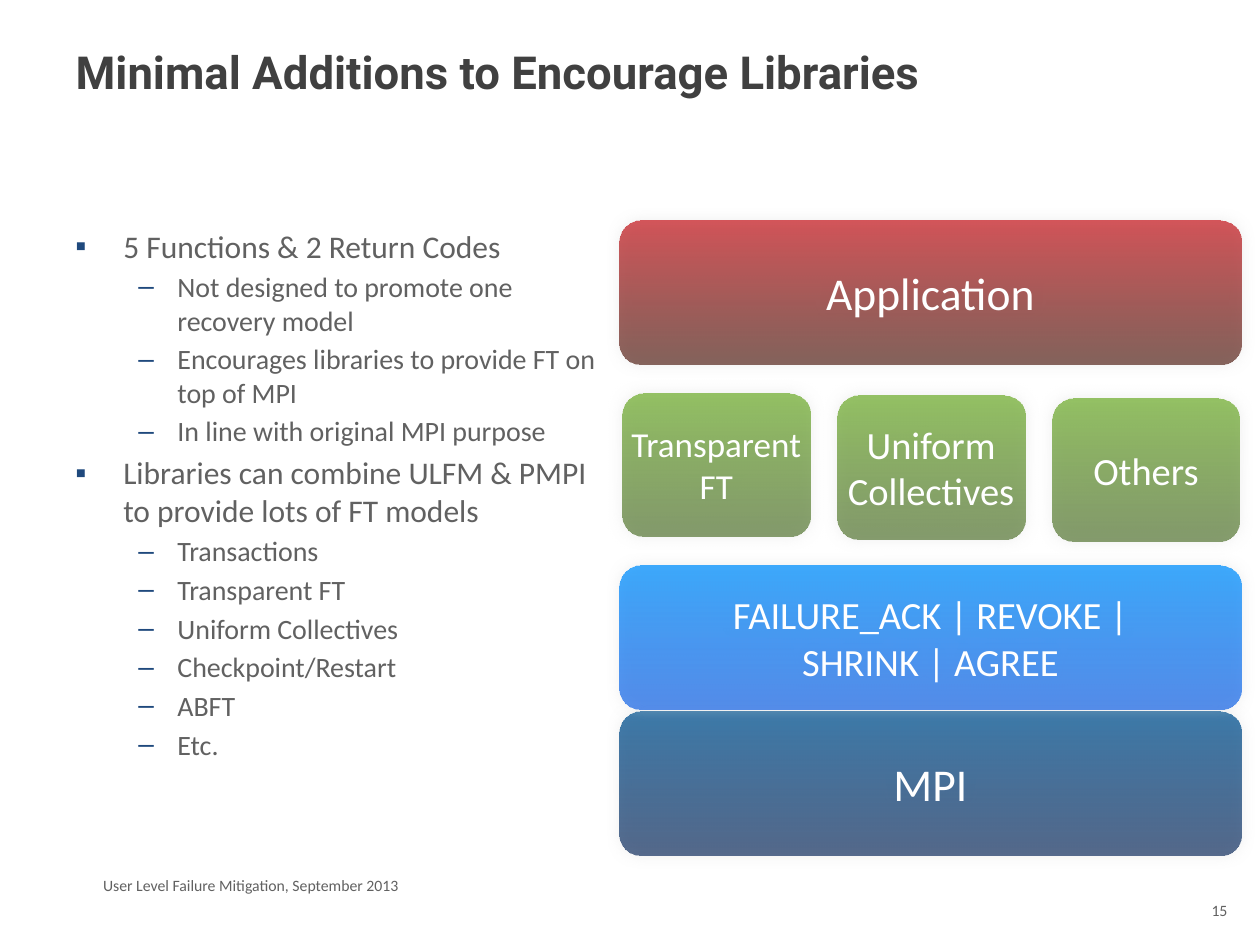
import pptx
import pptx.util
import pptx.dml.color
import pptx.enum.shapes
import pptx.enum.text
import pptx.oxml
import pptx.oxml.ns
import lxml.etree

COLUMNS, ROWS = 100, 75
BODY_FONT, TITLE_FONT = "Calibri", "Roboto"
GREY, DARK, NAVY, WHITE = "616161", "404040", "1F497D", "FFFFFF"
RED = ("C82026", "49160B")
GREEN = ("74B034", "496C25")
SKY = ("0090FF", "0057E5")
BLUE = ("005291", "002054")
ALIGN = pptx.enum.text.PP_ALIGN
ANCHOR = pptx.enum.text.MSO_ANCHOR


def colour(value):
    return pptx.dml.color.RGBColor.from_string(value)


def add_element(parent, tag, **attributes):
    name = pptx.oxml.ns.qn(tag)
    return lxml.etree.SubElement(parent, name, attributes)


class SlideBuilder:
    def __init__(self, deck):
        self.deck = deck
        self.page = deck.slides.add_slide(deck.slide_layouts[5])

    def place(self, left, top, width, height):
        """Turn grid columns and rows into slide lengths."""
        across = self.deck.slide_width / COLUMNS
        down = self.deck.slide_height / ROWS
        return (round(left * across), round(top * down),
                round(width * across), round(height * down))

    def style(self, para, size, value, font=BODY_FONT, bold=False):
        for span in para.runs:
            span.font.name = font
            span.font.size = pptx.util.Pt(size)
            span.font.bold = bold
            span.font.color.rgb = colour(value)

    def title(self, text, *area):
        box = self.page.shapes.title
        box.left, box.top, box.width, box.height = self.place(*area)
        frame = box.text_frame
        frame.text = text
        frame.vertical_anchor = ANCHOR.TOP
        frame.auto_size = pptx.enum.text.MSO_AUTO_SIZE.NONE
        frame.paragraphs[0].alignment = ALIGN.LEFT
        self.style(frame.paragraphs[0], 26, DARK, TITLE_FONT, True)

    def text_box(self, text, *area):
        frame = self.page.shapes.add_textbox(*self.place(*area)).text_frame
        frame.word_wrap = True
        frame.text = text
        return frame

    def note(self, text, align, *area):
        para = self.text_box(text, *area).paragraphs[0]
        para.alignment = align
        self.style(para, 9, GREY)

    def bullets(self, items, *area):
        frame = self.text_box("\n".join(text for level, text in items), *area)
        looks = [(18, 0.38, -0.38, "▪"), (16, 0.81, -0.31, "–")]
        for index, (level, text) in enumerate(items):
            size, margin, indent, mark = looks[level]
            para = frame.paragraphs[index]
            para.level = level
            if index:
                para.space_before = pptx.util.Pt(round(size * 0.18, 1))
            properties = para._p.get_or_add_pPr()
            properties.set("marL", str(pptx.util.Inches(margin)))
            properties.set("indent", str(pptx.util.Inches(indent)))
            add_element(add_element(properties, "a:buClr"), "a:srgbClr", val=NAVY)
            add_element(properties, "a:buFont", typeface="Arial")
            add_element(properties, "a:buChar", char=mark)
            self.style(para, size, GREY)

    def block(self, text, size, shades, *area):
        kind = pptx.enum.shapes.MSO_SHAPE.ROUNDED_RECTANGLE
        box = self.page.shapes.add_shape(kind, *self.place(*area))
        box.adjustments[0] = 0.15
        box.line.fill.background()

        # Translucent gradient from top to bottom
        box.fill.gradient()
        box.fill.gradient_angle = 270
        for stop, shade in zip(box.fill.gradient_stops, shades):
            stop.color.rgb = colour(shade)
        properties = box._element.spPr
        tints = properties.iter(pptx.oxml.ns.qn("a:srgbClr"))
        for tint, alpha in zip(list(tints), ("75000", "65000")):
            add_element(tint, "a:alpha", val=alpha)

        # Soft grey glow
        box.shadow.inherit = False
        effects = properties.find(pptx.oxml.ns.qn("a:effectLst"))
        glow = add_element(effects, "a:outerShdw", dist="0", dir="0",
                           blurRad=str(pptx.util.Pt(8)), rotWithShape="0")
        tint = add_element(glow, "a:srgbClr", val="D2D2D2")
        add_element(tint, "a:alpha", val="50000")

        # Centred label
        frame = box.text_frame
        frame.margin_left = frame.margin_right = 0
        frame.margin_top = frame.margin_bottom = 0
        frame.word_wrap = True
        frame.vertical_anchor = ANCHOR.MIDDLE
        frame.text = text
        for para in frame.paragraphs:
            para.alignment = ALIGN.CENTER
            self.style(para, size, WHITE)


def main():
    deck = pptx.Presentation()
    deck.slide_width = pptx.util.Inches(10)
    deck.slide_height = pptx.util.Inches(7.5)
    slide = SlideBuilder(deck)

    # Title and outline
    slide.title("Minimal Additions to Encourage Libraries", 5, 3, 90, 12.5)
    slide.bullets([
        (0, "5 Functions & 2 Return Codes"),
        (1, "Not designed to promote one recovery model"),
        (1, "Encourages libraries to provide FT on top of MPI"),
        (1, "In line with original MPI purpose"),
        (0, "Libraries can combine ULFM & PMPI to provide lots of FT models"),
        (1, "Transactions"),
        (1, "Transparent FT"),
        (1, "Uniform Collectives"),
        (1, "Checkpoint/Restart"),
        (1, "ABFT"),
        (1, "Etc."),
    ], 5, 17.5, 44.2, 49.5)

    # Footer and page number
    slide.note("User Level Failure Mitigation, September 2013", ALIGN.LEFT,
               7.2, 69, 65, 2.5)
    slide.note("15", ALIGN.RIGHT, 94.2, 71, 4.2, 4)

    # Software stack: full-width layers around a row of libraries
    left, width, height = 49.2, 49.3, 11.4
    layers = [
        ("MPI", 26, BLUE, 56.5),
        ("Application", 26, RED, 17.5),
        ("FAILURE_ACK | REVOKE |\nSHRINK | AGREE", 22, SKY, 44.9),
    ]
    for text, size, shades, top in layers:
        slide.block(text, size, shades, left, top, width, height)

    libraries = [("Transparent\nFT", 20), ("Uniform\nCollectives", 22),
                 ("Others", 22)]
    for index, (text, size) in enumerate(libraries):
        slide.block(text, size, GREEN,
                    49.4 + 17.05 * index, 31.2 + 0.2 * index, 14.9, height)

    deck.save("out.pptx")


if __name__ == "__main__":
    main()
